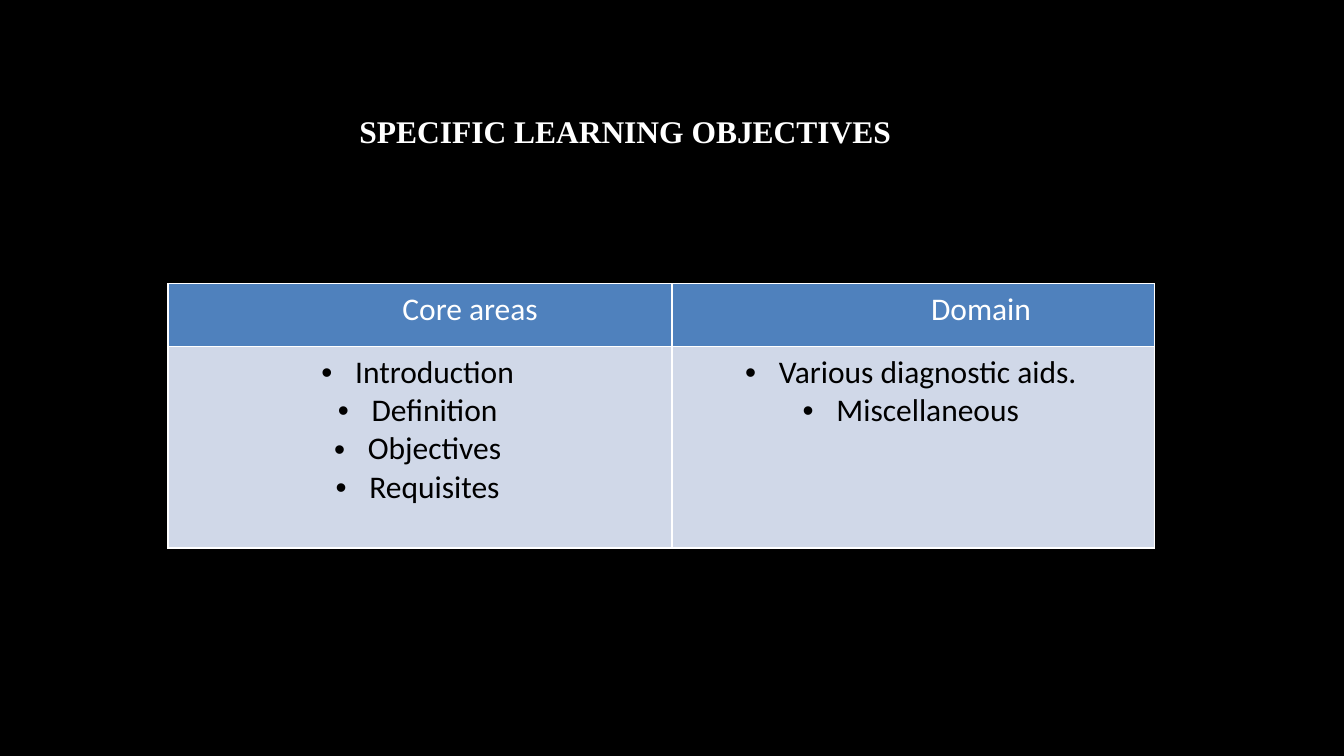
from lxml.etree import SubElement
from pptx import Presentation
from pptx.dml.color import RGBColor
from pptx.enum.text import MSO_ANCHOR, MSO_AUTO_SIZE, PP_ALIGN
from pptx.oxml import parse_xml
from pptx.oxml.ns import nsdecls, qn
from pptx.util import Cm, Pt

# Content: head, head indent in cm, bullet items, column width in cm
TITLE = "SPECIFIC LEARNING OBJECTIVES"
COLS = [
    ("Core areas", 4.47,
     ["Introduction", "Definition", "Objectives", "Requisites"], 10.16),
    ("Domain", 4.97,
     ["Various diagnostic aids.", "Miscellaneous"], 9.73),
]
ROWS = [1.27, 4.06]
HANG = 0.68

BLACK = RGBColor(0, 0, 0)
WHITE = RGBColor(255, 255, 255)
BLUE = RGBColor(0x4F, 0x81, 0xBD)
PALE = RGBColor(0xD0, 0xD8, 0xE8)


def add_run(para, text, color, font="Calibri", bold=False):
    run = para.add_run()
    run.text = text
    run.font.name = font
    run.font.size = Pt(18)
    run.font.bold = bold
    run.font.color.rgb = color


def indent(para, left, first=0):
    props = para._p.get_or_add_pPr()
    props.set("marL", str(Cm(left)))
    props.set("indent", str(Cm(first)))
    return props


def style_cell(cell, fill):
    cell.fill.solid()
    cell.fill.fore_color.rgb = fill
    props = cell._tc.get_or_add_tcPr()
    for pos, side in enumerate("LRTB"):
        props.insert(pos, parse_xml(
            f'<a:ln{side} {nsdecls("a")} w="{Pt(1)}"><a:solidFill>'
            f'<a:srgbClr val="{WHITE}"/></a:solidFill></a:ln{side}>'))


def add_list(cell, items):
    cell.margin_right = Cm(0.35)
    frame = cell.text_frame
    for num, item in enumerate(items):
        para = frame.add_paragraph() if num else frame.paragraphs[0]
        para.alignment = PP_ALIGN.CENTER
        props = indent(para, HANG, -HANG)
        SubElement(props, qn("a:buFont")).set("typeface", "Arial")
        SubElement(props, qn("a:buChar")).set("char", "•")
        add_run(para, item, BLACK)


# Slide
deck = Presentation()
deck.slide_width, deck.slide_height = Cm(27.1), Cm(15.24)
slide = deck.slides.add_slide(deck.slide_layouts[5])
slide.background.fill.solid()
slide.background.fill.fore_color.rgb = BLACK

# Title
title = slide.shapes.title
title.left, title.top = Cm(6.68), Cm(2.12)
title.width, title.height = Cm(11.86), Cm(1.02)
frame = title.text_frame
frame.auto_size = MSO_AUTO_SIZE.NONE
frame.vertical_anchor = MSO_ANCHOR.MIDDLE
para = frame.paragraphs[0]
para.alignment = PP_ALIGN.CENTER
add_run(para, TITLE, WHITE, "Times New Roman", True)

# Table
width = sum(col[3] for col in COLS)
table = slide.shapes.add_table(len(ROWS), len(COLS), Cm(3.39), Cm(5.72),
                               Cm(width), Cm(sum(ROWS))).table
table.first_row = table.horz_banding = False
for row, high in zip(table.rows, ROWS):
    row.height = Cm(high)
for num, (head, left, items, wide) in enumerate(COLS):
    table.columns[num].width = Cm(wide)
    top, body = table.cell(0, num), table.cell(1, num)
    style_cell(top, BLUE)
    style_cell(body, PALE)
    para = top.text_frame.paragraphs[0]
    indent(para, left)
    add_run(para, head, WHITE)
    add_list(body, items)

deck.save("out.pptx")
